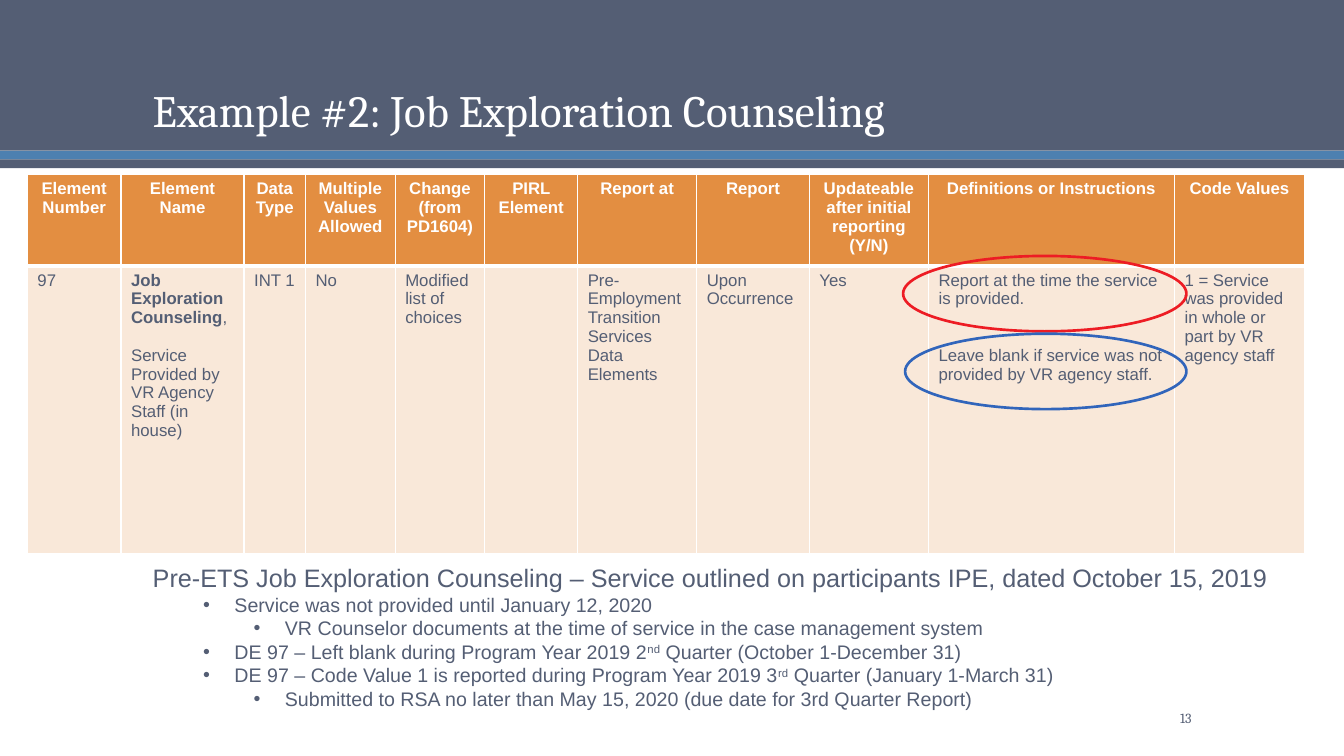
from lxml import etree
from pptx import Presentation
from pptx.dml.color import RGBColor
from pptx.enum.shapes import MSO_SHAPE
from pptx.enum.text import MSO_ANCHOR, PP_ALIGN
from pptx.oxml.ns import qn
from pptx.util import Cm, Pt

RECT, OVAL = MSO_SHAPE.RECTANGLE, MSO_SHAPE.OVAL
TOP, MIDDLE, BOTTOM = MSO_ANCHOR.TOP, MSO_ANCHOR.MIDDLE, MSO_ANCHOR.BOTTOM
LEFT, CENTER, RIGHT = PP_ALIGN.LEFT, PP_ALIGN.CENTER, PP_ALIGN.RIGHT

COLORS = {
    "slate": "545E74", "blue": "4D80B0", "white": "FFFFFF", "orange": "E38E41",
    "cream": "F9E8D9", "red_ring": "ED1C24", "blue_ring": "3165BB",
}
SLIDE_W, SLIDE_H = 33.87, 19.05

# Header, width in cm, and body paragraphs as (space before in pt, [(text, bold)])
COLUMNS = [
    ("Element Number", 2.36, [(0, [("97", False)])]),
    ("Element Name", 3.1, [
        (0, [("Job Exploration Counseling", True), (",", False)]),
        (13.4, [("Service Provided by VR Agency Staff (in house)", False)])]),
    ("Data Type", 1.55, [(0, [("INT 1", False)])]),
    ("Multiple Values Allowed", 2.26, [(0, [("No", False)])]),
    ("Change (from PD1604)", 2.26, [(0, [("Modified list of choices", False)])]),
    ("PIRL Element", 2.34, []),
    ("Report at", 3.0, [
        (0, [("Pre-Employment Transition Services Data Elements", False)])]),
    ("Report", 2.84, [(0, [("Upon Occurrence", False)])]),
    ("Updateable after initial reporting (Y/N)", 3.0, [(0, [("Yes", False)])]),
    ("Definitions or Instructions", 6.2, [
        (0, [("Report at the time the service is provided.", False)]),
        (26.8, [("Leave blank if service was not provided by VR agency staff.", False)])]),
    ("Code Values", 3.28, [
        (0, [("1 = Service was provided in whole or part by VR agency staff", False)])]),
]

# Level and runs as (text, is superscript)
NOTES = [
    (0, [("Pre-ETS Job Exploration Counseling – Service outlined on participants IPE, "
          "dated October 15, 2019", False)]),
    (1, [("Service was not provided until January 12, 2020", False)]),
    (2, [("VR Counselor documents at the time of service in the case management system",
          False)]),
    (1, [("DE 97 – Left blank during Program Year 2019 2", False), ("nd", True),
         (" Quarter (October 1-December 31)", False)]),
    (1, [("DE 97 – Code Value 1 is reported during Program Year 2019 3", False),
         ("rd", True), (" Quarter (January 1-March 31)", False)]),
    (2, [("Submitted to RSA no later than May 15, 2020 (due date for 3rd Quarter Report)",
          False)]),
]


def rgb(name):
    return RGBColor.from_string(COLORS[name])


def add_run(p, text, size, color, font="Arial", bold=False):
    r = p.add_run()
    r.text = text
    r.font.size, r.font.name, r.font.bold = Pt(size), font, bold
    r.font.color.rgb = rgb(color)
    return r


def add_text_frame(slide, box, anchor=TOP):
    tf = slide.shapes.add_textbox(*map(Cm, box)).text_frame
    tf.word_wrap = True
    tf.vertical_anchor = anchor
    return tf


def paragraph_at(tf, i):
    return tf.paragraphs[0] if i == 0 else tf.add_paragraph()


def add_band(slide, box, color):
    sp = slide.shapes.add_shape(RECT, *map(Cm, box))
    sp.shadow.inherit = False
    sp.fill.solid()
    sp.fill.fore_color.rgb = rgb(color)
    sp.line.fill.background()


def add_title(slide, box, text):
    """Dark block with two stripes below it, and the title at its foot."""
    x, y, w, h = box
    stripe = 0.22
    block_h = h - 2 * stripe
    add_band(slide, (x, y, w, block_h), "slate")
    add_band(slide, (x, y + block_h, w, stripe), "blue")
    add_band(slide, (x, y + block_h + stripe, w, stripe), "slate")
    tf = add_text_frame(slide, (x + 3.6, y + 0.71, 26.67, 2.87), BOTTOM)
    p = tf.paragraphs[0]
    p.line_spacing = 0.9
    add_run(p, text, 32, "white", "Cambria")


def set_borders(cell, widths):
    """Draw white cell edges, with widths in points for each side."""
    tc_pr = cell._tc.get_or_add_tcPr()
    for side, width in widths.items():
        ln = etree.SubElement(tc_pr, qn(f"a:ln{side}"), w=str(Pt(width)))
        fill = etree.SubElement(ln, qn("a:solidFill"))
        etree.SubElement(fill, qn("a:srgbClr"), val=COLORS["white"])


def fill_cell(cell, paragraphs, fill, color, align, bottom):
    set_borders(cell, {"L": 1, "R": 1, "T": 1 if bottom == 3 else 3, "B": bottom})
    cell.fill.solid()
    cell.fill.fore_color.rgb = rgb(fill)
    for i, (gap, runs) in enumerate(paragraphs):
        p = paragraph_at(cell.text_frame, i)
        p.alignment = align
        if gap:
            p.space_before = Pt(gap)
        for text, bold in runs:
            add_run(p, text, 12, color, bold=bold)


def add_element_table(slide, box):
    header_h = 2.3
    table = slide.shapes.add_table(2, len(COLUMNS), *map(Cm, box)).table
    table.rows[0].height = Cm(header_h)
    table.rows[1].height = Cm(box[3] - header_h)
    for i, (header, width, body) in enumerate(COLUMNS):
        table.columns[i].width = Cm(width)
        fill_cell(table.cell(0, i), [(0, [(header, True)])], "orange", "white", CENTER, 3)
        fill_cell(table.cell(1, i), body, "cream", "slate", LEFT, 1)


def add_notes(slide, box):
    tf = add_text_frame(slide, box)
    for i, (level, runs) in enumerate(NOTES):
        p = paragraph_at(tf, i)
        if level:
            p.level = level
            p_pr = p._p.get_or_add_pPr()
            p_pr.set("marL", str(Cm(2.06 + 1.27 * (level - 1))))
            p_pr.set("indent", str(-Cm(0.79)))
            etree.SubElement(p_pr, qn("a:buFont"), typeface="Arial")
            etree.SubElement(p_pr, qn("a:buChar"), char="•")
        for text, raised in runs:
            r = add_run(p, text, 14 if level else 18, "slate")
            if raised:
                r._r.get_or_add_rPr().set("baseline", "30000")


def add_ring(slide, box, color):
    sp = slide.shapes.add_shape(OVAL, *map(Cm, box))
    sp.shadow.inherit = False
    sp.fill.background()
    sp.line.color.rgb = rgb(color)
    sp.line.width = Pt(1.89)


def add_page_number(slide, box, number):
    p = add_text_frame(slide, box, MIDDLE).paragraphs[0]
    p.alignment = RIGHT
    add_run(p, number, 10, "slate", "Cambria")


def main():
    prs = Presentation()
    prs.slide_width, prs.slide_height = Cm(SLIDE_W), Cm(SLIDE_H)
    slide = prs.slides.add_slide(prs.slide_layouts[6])
    add_title(slide, (0, 0, SLIDE_W, 4.24), "Example #2: Job Exploration Counseling")
    add_element_table(slide, (0.69, 4.4, 32.19, 9.56))
    add_notes(slide, (3.6, 14.05, 29.57, 4.01))
    add_ring(slide, (22.76, 6.45, 7.14, 1.9), "red_ring")
    add_ring(slide, (22.81, 8.41, 7.09, 1.9), "blue_ring")
    add_page_number(slide, (26.47, 17.7, 3.81, 0.76), "13")
    prs.save("out.pptx")


if __name__ == "__main__":
    main()
